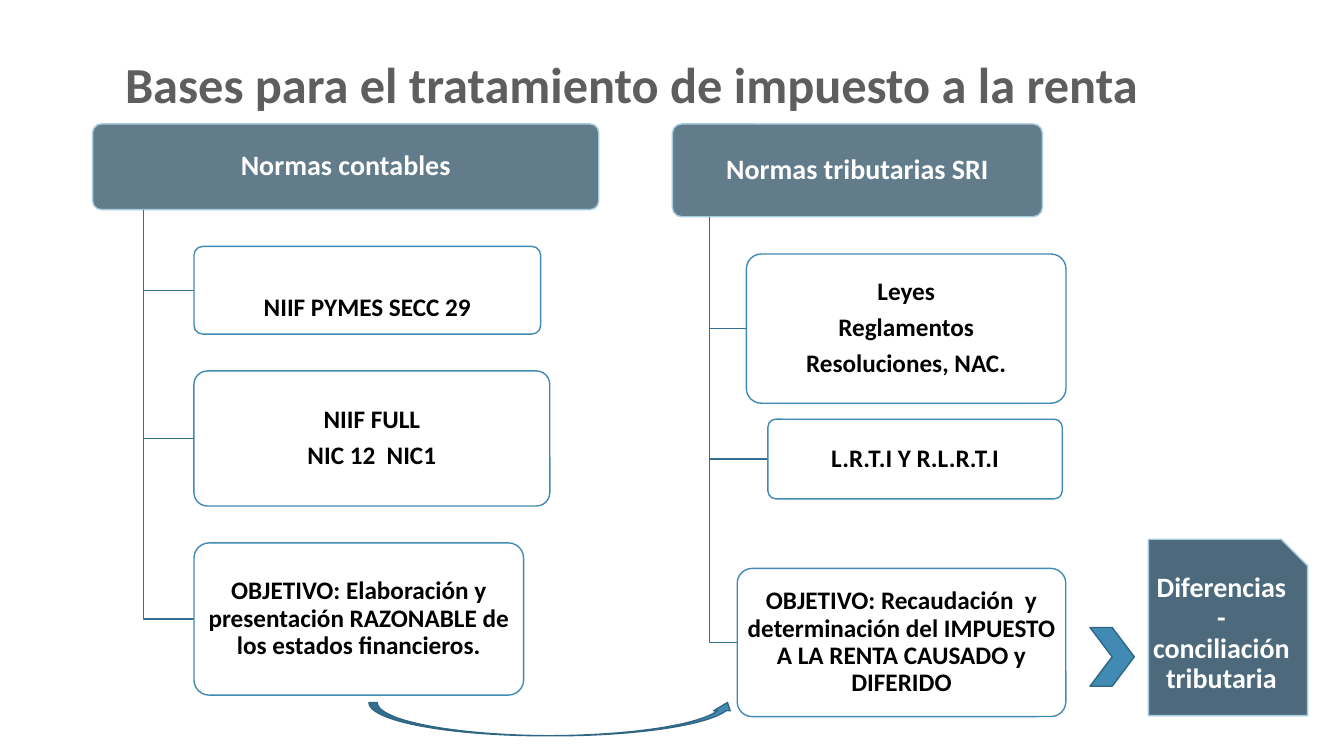
from typing import NamedTuple

from lxml import etree
from pptx import Presentation
from pptx.dml.color import RGBColor
from pptx.enum.shapes import MSO_SHAPE
from pptx.enum.text import MSO_ANCHOR, PP_ALIGN
from pptx.oxml.ns import qn
from pptx.util import Inches, Pt

ROUNDED = MSO_SHAPE.ROUNDED_RECTANGLE
SNIPPED = MSO_SHAPE.SNIP_1_RECTANGLE
CURVED_ARROW = MSO_SHAPE.CURVED_UP_ARROW
CHEVRON = MSO_SHAPE.CHEVRON
MIDDLE = MSO_ANCHOR.MIDDLE
LEFT, CENTER = PP_ALIGN.LEFT, PP_ALIGN.CENTER

WHITE = RGBColor(0xFF, 0xFF, 0xFF)
BLACK = RGBColor(0x00, 0x00, 0x00)
TITLE_GREY = RGBColor(0x5E, 0x5E, 0x5E)
NAVY = RGBColor(0x20, 0x45, 0x5A)
PALE_BLUE = RGBColor(0xA7, 0xCB, 0xDF)
BLUE = RGBColor(0x41, 0x8A, 0xB3)
BRANCH_BLUE = RGBColor(0x34, 0x6F, 0x8F)
ARROW_EDGE = RGBColor(0x30, 0x66, 0x84)

FONT = "Calibri"
SLIDE_W, SLIDE_H = Inches(13.33), Inches(7.5)
TITLE_ONLY = 5


class Node(NamedTuple):
    text: str
    width: float
    height: float
    gap: float  # rows above the node
    shift: float = 0  # columns from the common left edge
    lowered: float = 0  # rows kept free above the text


ACCOUNTING = [
    Node("NIIF PYMES SECC 29", 25.8, 11.6, 4.87, lowered=4.8),
    Node("NIIF FULL\nNIC 12  NIC1", 26.48, 17.87, 4.87),
    Node("OBJETIVO: Elaboración y presentación RAZONABLE de los estados financieros.",
         24.53, 20.13, 4.87),
]
TAX = [
    Node("Leyes\nReglamentos\nResoluciones, NAC.", 23.78, 19.73, 4.93),
    Node("L.R.T.I Y R.L.R.T.I", 21.9, 10.53, 2.13, shift=1.6),
    Node("OBJETIVO: Recaudación  y determinación del IMPUESTO A LA RENTA CAUSADO y DIFERIDO",
         24.45, 19.6, 9.2, shift=-0.68),
]


def col(count):
    """Length of hundredths of the slide's width."""
    return round(SLIDE_W * count / 100)


def row(count):
    """Length of hundredths of the slide's height."""
    return round(SLIDE_H * count / 100)


def grid(x, y, width, height):
    return col(x), row(y), col(width), row(height)


def style_text(frame, size, color, align):
    frame.word_wrap = True
    frame.vertical_anchor = MIDDLE
    for paragraph in frame.paragraphs:
        paragraph.alignment = align
        paragraph.line_spacing = 0.9
        for run in paragraph.runs:
            run.font.name = FONT
            run.font.size = Pt(size)
            run.font.bold = True
            run.font.color.rgb = color


def add_panel(slide, kind, box, fill, edge, opacity=100):
    panel = slide.shapes.add_shape(kind, *box)
    panel.shadow.inherit = False
    panel.fill.solid()
    panel.fill.fore_color.rgb = fill
    panel.line.color.rgb = edge
    panel.line.width = Pt(1)
    if opacity < 100:
        fill_color = panel.fill._xPr.find(qn("a:solidFill"))[0]
        etree.SubElement(fill_color, qn("a:alpha"), val=str(opacity * 1000))
    return panel


def add_label(panel, text, size, color, lowered=0):
    frame = panel.text_frame
    frame.text = text
    frame.margin_left = frame.margin_right = Inches(0.04)
    frame.margin_top = Inches(0.03) + row(lowered)
    frame.margin_bottom = Inches(0.03)
    style_text(frame, size, color, CENTER)
    for paragraph in frame.paragraphs:
        paragraph.space_after = Pt(size * 0.35)


def add_branch(slide, trunk_x, top, node_x, middle):
    """Elbow line from the header's bottom to the middle of a node's left side."""
    builder = slide.shapes.build_freeform(col(trunk_x), row(top))
    builder.add_line_segments(
        [(col(trunk_x), row(middle)), (col(node_x), row(middle))], close=False)
    branch = builder.convert_to_shape()
    branch.shadow.inherit = False
    branch.fill.background()
    branch.line.color.rgb = BRANCH_BLUE
    branch.line.width = Pt(1)


def add_hierarchy(slide, box, heading, nodes):
    """Header filling the box, with its nodes hanging below it."""
    x, y, width, height = box
    header = add_panel(slide, ROUNDED, grid(*box), NAVY, PALE_BLUE, 70)
    header.adjustments[0] = 0.1
    add_label(header, heading, 20, WHITE)

    bottom = y + height
    node_y = bottom
    for node in nodes:
        node_x = x + width * 0.2 + node.shift
        node_y += node.gap
        add_branch(slide, x + width * 0.1, bottom, node_x, node_y + node.height / 2)
        card = add_panel(slide, ROUNDED, grid(node_x, node_y, node.width, node.height),
                         WHITE, BLUE, 90)
        card.adjustments[0] = 0.1
        add_label(card, node.text, 18, BLACK, node.lowered)
        node_y += node.height


def add_title(slide, box):
    title = slide.shapes.title
    title.left, title.top, title.width, title.height = grid(*box)
    title.text_frame.text = "Bases para el tratamiento de impuesto a la renta"
    style_text(title.text_frame, 36, TITLE_GREY, LEFT)
    title.text_frame.margin_left = Inches(0.32)


def add_outcome(slide, box):
    """Resulting differences, with the chevron that leads to them."""
    x, y, width, height = box
    differences = add_panel(slide, SNIPPED, grid(*box), NAVY, PALE_BLUE, 80)
    add_label(differences, "Diferencias-conciliación tributaria", 20, WHITE)
    add_panel(slide, CHEVRON, grid(x - 4.35, y + height / 2, 3.3, height / 3),
              BLUE, ARROW_EDGE)


def main():
    presentation = Presentation()
    presentation.slide_width, presentation.slide_height = SLIDE_W, SLIDE_H
    slide = presentation.slides.add_slide(presentation.slide_layouts[TITLE_ONLY])
    add_title(slide, (6.9, 5.33, 86.25, 12.4))
    add_hierarchy(slide, (6.9, 16.4, 37.65, 11.33), "Normas contables", ACCOUNTING)
    add_hierarchy(slide, (50.03, 16.4, 27.53, 12.27), "Normas tributarias SRI", TAX)
    add_outcome(slide, (85.45, 71.33, 11.85, 23.33))
    add_panel(slide, CURVED_ARROW, grid(27.45, 92.93, 27.3, 4.4), BLUE, ARROW_EDGE)
    presentation.save("out.pptx")


if __name__ == "__main__":
    main()
